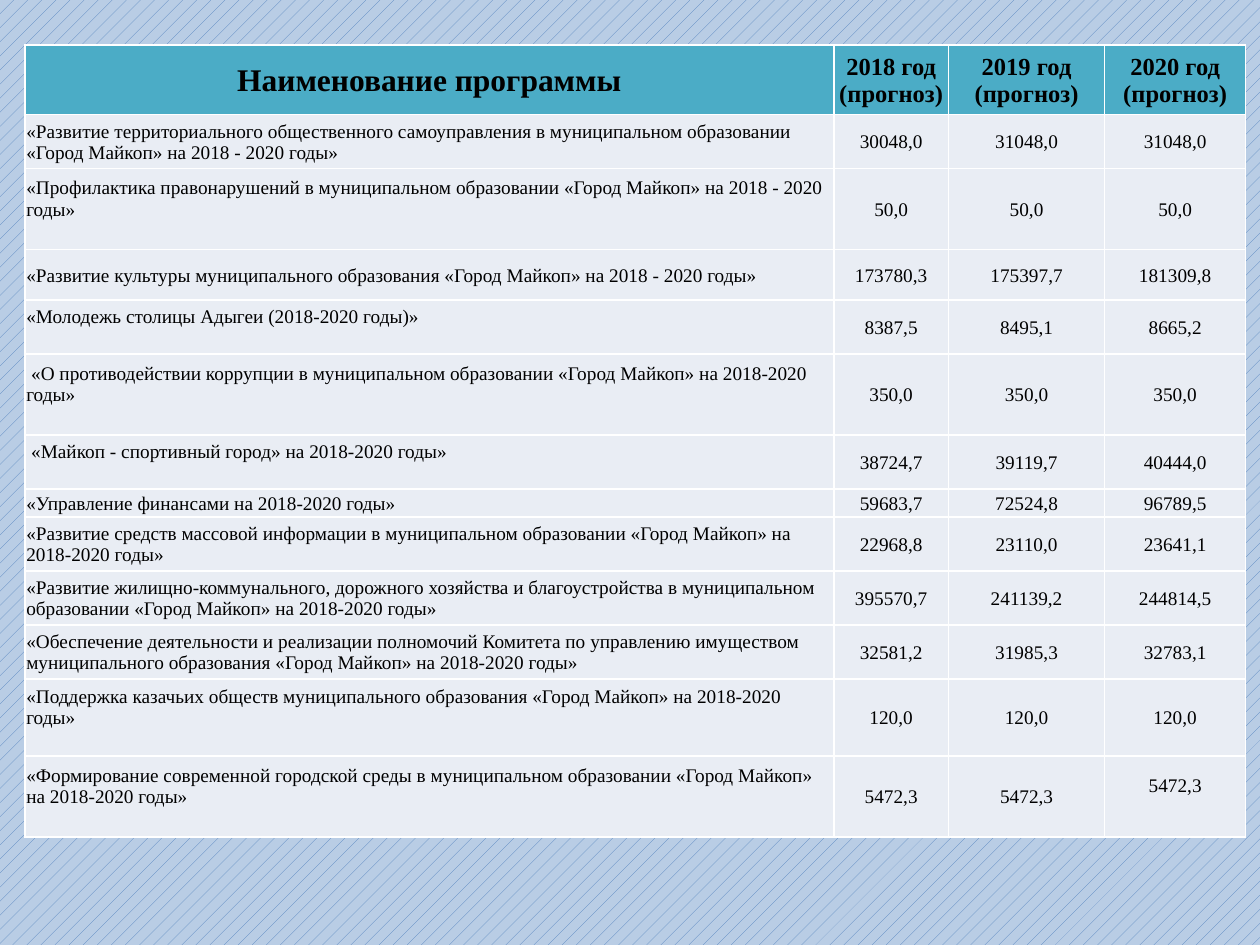
from pptx import Presentation
from pptx.dml.color import RGBColor
from pptx.enum import dml, text
from pptx.oxml import parse_xml
from pptx.oxml.ns import nsdecls
from pptx.util import Cm, Pt

COLORS = {
    "hatch": "4F81BD", "page": "B9CDE5", "head": "4BACC6",
    "body": "E9EDF4", "border": "FFFFFF", "ink": "000000",
}
FONT = "Times New Roman"
INSET = 0.03
LIFT = 0.43  # extra bottom inset that raises a text by half a line

# Each cell is a list of paragraphs; "\n" is a line break inside one.
HEADINGS = [
    ["Наименование программы"],
    ["2018 год\n(прогноз)"],
    ["2019 год\n(прогноз)"],
    ["2020 год", "(прогноз)"],
]
# height in cm, program, forecasts, columns whose text sits higher
PROGRAMS = [
    (1.09, "«Развитие территориального общественного самоуправления в муниципальном образовании "
           "«Город Майкоп» на 2018 - 2020 годы»", ("30048,0", "31048,0", "31048,0"), ()),
    (1.63, "«Профилактика правонарушений в муниципальном образовании «Город Майкоп» "
           "на 2018 - 2020 годы»", ("50,0", "50,0", "50,0"), (0,)),
    (1.02, "«Развитие культуры муниципального образования «Город Майкоп» на 2018 - 2020 годы»",
     ("173780,3", "175397,7", "181309,8"), ()),
    (1.09, "«Молодежь столицы Адыгеи (2018-2020 годы)»", ("8387,5", "8495,1", "8665,2"), (0,)),
    (1.63, " «О противодействии коррупции в муниципальном образовании «Город Майкоп» "
           "на 2018-2020 годы»", ("350,0", "350,0", "350,0"), (0,)),
    (1.09, " «Майкоп - спортивный город» на 2018-2020 годы»",
     ("38724,7", "39119,7", "40444,0"), (0,)),
    (0.56, "«Управление финансами на 2018-2020 годы»", ("59683,7", "72524,8", "96789,5"), ()),
    (1.09, "«Развитие средств массовой информации в муниципальном образовании «Город Майкоп» "
           "на 2018-2020 годы»", ("22968,8", "23110,0", "23641,1"), ()),
    (1.09, "«Развитие жилищно-коммунального, дорожного хозяйства и благоустройства в муниципальном "
           "образовании «Город Майкоп» на 2018-2020 годы»",
     ("395570,7", "241139,2", "244814,5"), ()),
    (1.09, "«Обеспечение деятельности и реализации полномочий Комитета по управлению имуществом "
           "муниципального образования «Город Майкоп» на 2018-2020 годы»",
     ("32581,2", "31985,3", "32783,1"), ()),
    (1.55, "«Поддержка казачьих обществ муниципального образования «Город Майкоп» "
           "на 2018-2020 годы»", ("120,0", "120,0", "120,0"), (0,)),
    (1.63, "«Формирование современной городской среды в муниципальном образовании «Город Майкоп» "
           "на 2018-2020 годы»", ("5472,3", "5472,3", "5472,3"), (0, 3)),
]
COLUMN_WIDTHS = [16.31, 2.31, 3.15, 2.84]
ROW_HEIGHTS = [1.4] + [program[0] for program in PROGRAMS]


def rgb(name):
    return RGBColor.from_string(COLORS[name])


def add_borders(cell):
    properties = cell._tc.get_or_add_tcPr()
    for place, side in enumerate(("lnL", "lnR", "lnT", "lnB")):
        properties.insert(place, parse_xml(
            f'<a:{side} {nsdecls("a")} w="12700"><a:solidFill>'
            f'<a:srgbClr val="{COLORS["border"]}"/></a:solidFill></a:{side}>'))


def fill_cell(cell, paragraphs, size, fill, bold=False, centred=True, raised=False):
    cell.fill.solid()
    cell.fill.fore_color.rgb = rgb(fill)
    add_borders(cell)
    cell.margin_left = cell.margin_right = cell.margin_top = Cm(INSET)
    cell.margin_bottom = Cm(LIFT if raised else 0)
    cell.vertical_anchor = text.MSO_ANCHOR.MIDDLE
    frame = cell.text_frame
    for number, content in enumerate(paragraphs):
        para = frame.add_paragraph() if number else frame.paragraphs[0]
        para.alignment = text.PP_ALIGN.CENTER if centred else text.PP_ALIGN.LEFT
        for line_number, line in enumerate(content.split("\n")):
            if line_number:
                para.add_line_break()
            span = para.add_run()
            span.text = line
            span.font.name = FONT
            span.font.size = Pt(size)
            span.font.bold = bold
            span.font.color.rgb = rgb("ink")


def main():
    deck = Presentation()
    deck.slide_width, deck.slide_height = Cm(25.4), Cm(19.05)
    page = deck.slides.add_slide(deck.slide_layouts[6])

    backdrop = page.background.fill
    backdrop.patterned()
    backdrop.pattern = dml.MSO_PATTERN.PERCENT_10
    backdrop.fore_color.rgb = rgb("hatch")
    backdrop.back_color.rgb = rgb("page")

    table = page.shapes.add_table(
        len(ROW_HEIGHTS), len(COLUMN_WIDTHS), Cm(0.5), Cm(0.91),
        Cm(sum(COLUMN_WIDTHS)), Cm(sum(ROW_HEIGHTS))).table
    table.horz_banding = False
    for column, width in zip(table.columns, COLUMN_WIDTHS):
        column.width = Cm(width)
    for row, height in zip(table.rows, ROW_HEIGHTS):
        row.height = Cm(height)

    for column, heading in enumerate(HEADINGS):
        fill_cell(table.cell(0, column), heading, 14 if column else 18, "head", bold=True)
    for row, (_, program, forecasts, raised) in enumerate(PROGRAMS, 1):
        for column, content in enumerate((program, *forecasts)):
            fill_cell(table.cell(row, column), [content], 11, "body",
                      centred=column > 0, raised=column in raised)

    deck.save("out.pptx")


if __name__ == "__main__":
    main()
